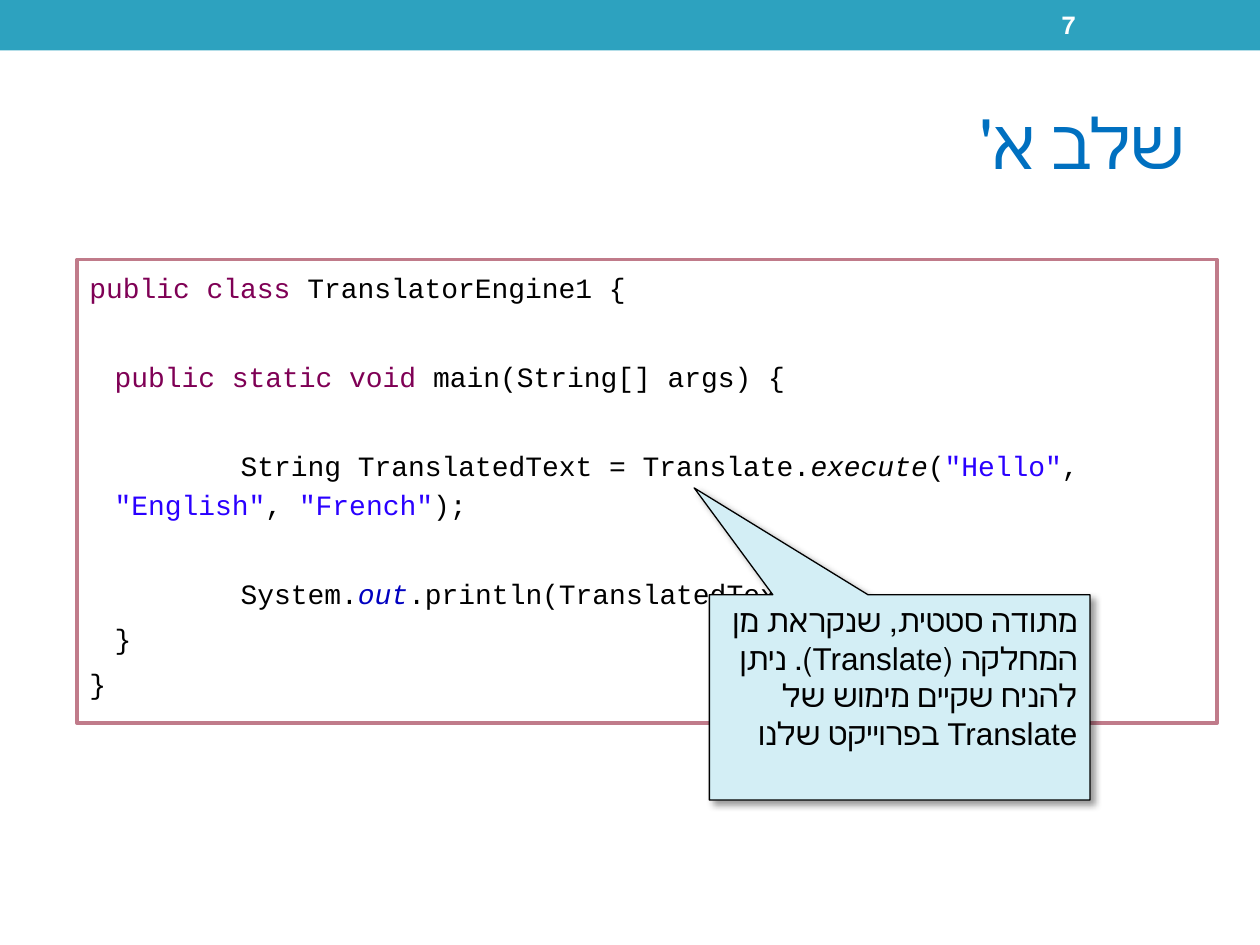
from dataclasses import dataclass

from lxml import etree
from pptx import Presentation
from pptx.dml.color import RGBColor
from pptx.enum.shapes import MSO_SHAPE
from pptx.enum.text import MSO_ANCHOR, MSO_AUTO_SIZE, PP_ALIGN
from pptx.oxml.ns import qn
from pptx.util import Emu, Inches, Pt

RECTANGLE, CALLOUT = MSO_SHAPE.RECTANGLE, MSO_SHAPE.RECTANGULAR_CALLOUT
TOP, MIDDLE = MSO_ANCHOR.TOP, MSO_ANCHOR.MIDDLE
LEFT, RIGHT = PP_ALIGN.LEFT, PP_ALIGN.RIGHT
NO_AUTOFIT = MSO_AUTO_SIZE.NONE

SLIDE_WIDTH, SLIDE_HEIGHT = Inches(10), Inches(7.5)
COLUMNS, ROWS = 100, 75
BLACK, KEYWORD, STRING, FIELD = "000000", "7F0055", "2A00FF", "0000C0"
CODE_SIZE, CODE_INDENT, TAB_STEP = 16, 0.2, 1
LINE_GAP, BLOCK_GAP = 3.6, 28.8


@dataclass(frozen=True)
class Box:
    """An area measured in columns and rows of the slide grid."""
    column: float
    row: float
    width: float
    height: float

    def place(self) -> tuple[Emu, Emu, Emu, Emu]:
        across, down = SLIDE_WIDTH / COLUMNS, SLIDE_HEIGHT / ROWS
        return (Emu(round(self.column * across)), Emu(round(self.row * down)),
                Emu(round(self.width * across)), Emu(round(self.height * down)))


@dataclass(frozen=True)
class Piece:
    text: str
    color: str = BLACK
    italic: bool = False


@dataclass(frozen=True)
class CodeLine:
    pieces: tuple[Piece, ...]
    gap: float = LINE_GAP


HEADER = Box(0, 0, 100, 4)
TITLE = Box(5, 5.8, 90, 10.8)
CODE = Box(6.1, 20.6, 90.5, 36.8)
NUMBER = Box(83.3, 0.2, 11.7, 3.6)
NOTE = Box(56.3, 47.2, 30.2, 16.3)

CODE_LINES = (
    CodeLine((Piece("public class ", KEYWORD), Piece("TranslatorEngine1 {"))),
    CodeLine((Piece("\t"), Piece("public static void ", KEYWORD),
              Piece("main(String[] args) {")), BLOCK_GAP),
    CodeLine((Piece("\t\tString TranslatedText = Translate."),
              Piece("execute", italic=True), Piece("("),
              Piece('"Hello"', STRING), Piece(", "),
              Piece('"English"', STRING), Piece(", "),
              Piece('"French"', STRING), Piece(");")), BLOCK_GAP),
    CodeLine((Piece("\t\tSystem."), Piece("out", FIELD, True),
              Piece(".println(TranslatedText);")), BLOCK_GAP),
    CodeLine((Piece("\t}"),)),
    CodeLine((Piece("}"),)),
)


def rgb(color: str) -> RGBColor:
    return RGBColor.from_string(color)


def move(shape, box: Box) -> None:
    shape.left, shape.top, shape.width, shape.height = box.place()


def add_span(para, text: str, *, size: float, color: str = BLACK,
             font: str = "Arial", bold: bool = False, italic: bool = False):
    span = para.add_run()
    span.text = text
    span.font.size, span.font.name = Pt(size), font
    span.font.bold, span.font.italic = bold, italic
    span.font.color.rgb = rgb(color)
    return span


def write_hebrew(shape, text: str, *, align=RIGHT, anchor=TOP, **text_format):
    """Fill a shape with one right-to-left paragraph."""
    frame = shape.text_frame
    frame.word_wrap, frame.auto_size = True, NO_AUTOFIT
    frame.vertical_anchor = anchor
    para = frame.paragraphs[0]
    para.alignment = align
    para._p.get_or_add_pPr().set("rtl", "1")
    return add_span(para, text, **text_format)


def add_shape(page, kind, box: Box, fill: str, line: str | None = None):
    shape = page.shapes.add_shape(kind, *box.place())
    shape.shadow.inherit = False
    shape.fill.solid()
    shape.fill.fore_color.rgb = rgb(fill)
    if line:
        shape.line.color.rgb = rgb(line)
        shape.line.width = Pt(0.75)
    else:
        shape.line.fill.background()
    return shape


def add_shadow(shape) -> None:
    effects = shape._element.spPr.find(qn("a:effectLst"))
    shadow = etree.SubElement(effects, qn("a:outerShdw"), blurRad=str(Pt(4)),
                              dist=str(Pt(3)), dir=str(45 * 60000),
                              algn="tl", rotWithShape="0")
    color = etree.SubElement(shadow, qn("a:srgbClr"), val=BLACK)
    etree.SubElement(color, qn("a:alpha"), val="40000")


def write_code(body) -> None:
    move(body, CODE)
    body.line.color.rgb = rgb("C07B8A")
    body.line.width = Pt(2)
    frame = body.text_frame
    frame.word_wrap, frame.auto_size = True, NO_AUTOFIT
    frame.vertical_anchor = TOP
    for index, line in enumerate(CODE_LINES):
        para = frame.add_paragraph() if index else frame.paragraphs[0]
        para.alignment, para.line_spacing = LEFT, 1.15
        para.space_before = Pt(line.gap)
        properties = para._p.get_or_add_pPr()
        properties.set("marL", str(Inches(CODE_INDENT)))
        properties.set("indent", str(-Inches(CODE_INDENT)))
        properties.set("defTabSz", str(Inches(TAB_STEP)))
        etree.SubElement(properties, qn("a:buNone"))
        for piece in line.pieces:
            add_span(para, piece.text, size=CODE_SIZE, font="Courier New",
                     color=piece.color, italic=piece.italic)


def main() -> None:
    deck = Presentation()
    deck.slide_width, deck.slide_height = SLIDE_WIDTH, SLIDE_HEIGHT
    page = deck.slides.add_slide(deck.slide_layouts[1])

    add_shape(page, RECTANGLE, HEADER, "2DA2BF")
    title = page.shapes.title
    move(title, TITLE)
    span = write_hebrew(title, "שלב א'", anchor=MIDDLE, size=40, color="0070C0")
    span._r.get_or_add_rPr().set("spc", "-100")

    write_code(page.placeholders[1])

    number = page.shapes.add_textbox(*NUMBER.place())
    write_hebrew(number, "7", align=LEFT, anchor=MIDDLE, size=14,
                 color="FFFFFF", bold=True)

    note = add_shape(page, CALLOUT, NOTE, "D3EEF5", BLACK)
    note.adjustments[0], note.adjustments[1] = -0.54, -1.02
    add_shadow(note)
    write_hebrew(note, "מתודה סטטית, שנקראת מן המחלקה (Translate). "
                 "ניתן להניח שקיים מימוש של Translate בפרוייקט שלנו", size=18)

    deck.save("out.pptx")


if __name__ == "__main__":
    main()
